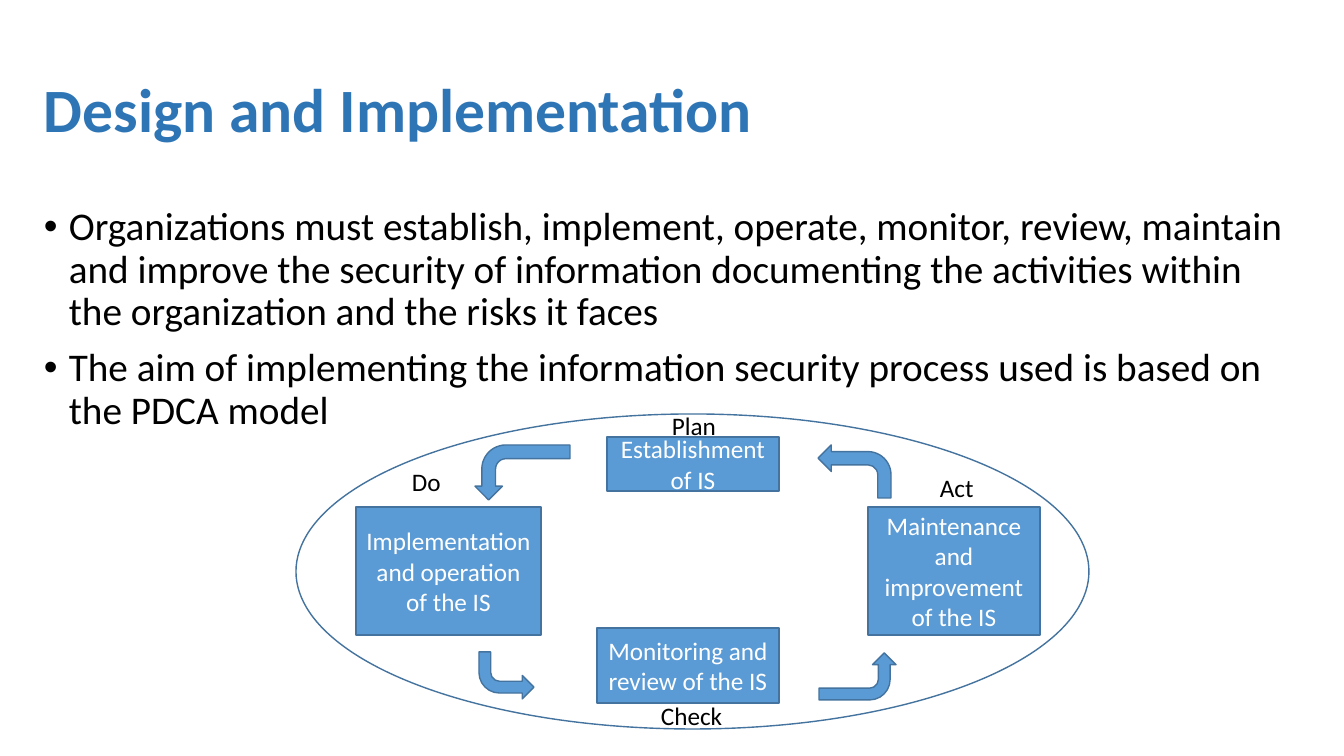
import pptx
import pptx.util
import pptx.dml.color
import pptx.enum.shapes
import pptx.enum.text
import pptx.oxml.ns
import lxml.etree

# Content: places are (left, top, width, height) in px
PAGE_SIZE = (1344, 756)
TITLE = ("Design and Implementation", (34, 40, 1278, 146))
BULLETS = [
    "Organizations must establish, implement, operate, monitor, review, maintain and improve "
    "the security of information documenting the activities within the organization and the risks it faces",
    "The aim of implementing the information security process used is based on the PDCA model",
]
BULLETS_PLACE = (34, 202, 1278, 251)
CYCLE_PLACE = (296, 414, 793, 315)
STAGES = [
    ("Establishment of IS", (607, 437, 172, 54)),
    ("Monitoring and review of the IS", (597, 628, 182, 75)),
    ("Maintenance and improvement of the IS", (868, 507, 172, 128)),
    ("Implementation and operation of the IS", (356, 507, 185, 128)),
]
# Each arrow is mirrored top to bottom, then turned by the given degrees
ARROWS = [
    ((479, 652, 55, 47), 0),
    ((834, 638, 47, 77), 270),
    ((495, 425, 55, 95), 90),
    ((818, 445, 73, 53), 180),
]
LABELS = [
    ("Plan", (662, 405, 65, 40)),
    ("Do", (402, 461, 49, 40)),
    ("Check", (651, 695, 83, 40)),
    ("Act", (930, 467, 54, 40)),
]


class Theme:
    font = "Calibri"
    title, text, light = "2E75B6", "000000", "FFFFFF"
    fill, line = "5B9BD5", "43739E"
    title_size, body_size, small_size = 44, 28, 18
    line_width = 1


EMU_PER_PX = 914400 / 100.8
SHAPES = pptx.enum.shapes.MSO_SHAPE
ALIGN = pptx.enum.text.PP_ALIGN
ANCHOR = pptx.enum.text.MSO_ANCHOR
AUTO_SIZE = pptx.enum.text.MSO_AUTO_SIZE
qn = pptx.oxml.ns.qn


def px(length):
    return pptx.util.Emu(round(length * EMU_PER_PX))


def color(value):
    return pptx.dml.color.RGBColor.from_string(value)


def apply(target, formats):
    for name, value in formats.items():
        setattr(target, name, value)


def write(para, text, size, ink, bold=False, **formats):
    apply(para, formats)
    span = para.add_run()
    span.text = text
    apply(span.font, {"name": Theme.font, "size": pptx.util.Pt(size), "bold": bold})
    span.font.color.rgb = color(ink)


def add_box(page, place, **formats):
    box = page.shapes.add_textbox(*map(px, place))
    apply(box.text_frame, {"word_wrap": True, **formats})
    return box.text_frame


def add_figure(page, kind, place, fill=None):
    figure = page.shapes.add_shape(kind, *map(px, place))
    figure.shadow.inherit = False
    if fill:
        figure.fill.solid()
        figure.fill.fore_color.rgb = color(fill)
    else:
        figure.fill.background()
    figure.line.color.rgb = color(Theme.line)
    figure.line.width = pptx.util.Pt(Theme.line_width)
    return figure


def add_bullet(para):
    properties = para._p.get_or_add_pPr()
    indent = px(25)
    properties.set("marL", str(indent))
    properties.set("indent", str(-indent))
    lxml.etree.SubElement(properties, qn("a:buFont")).set("typeface", "Arial")
    lxml.etree.SubElement(properties, qn("a:buChar")).set("char", "•")


def main():
    deck = pptx.Presentation()
    deck.slide_width, deck.slide_height = map(px, PAGE_SIZE)
    page = deck.slides.add_slide(deck.slide_layouts[6])

    # Title and bullets
    text, place = TITLE
    frame = add_box(page, place, vertical_anchor=ANCHOR.MIDDLE)
    write(frame.paragraphs[0], text, Theme.title_size, Theme.title, bold=True, line_spacing=0.9)
    frame = add_box(page, BULLETS_PLACE)
    for index, text in enumerate(BULLETS):
        para = frame.add_paragraph() if index else frame.paragraphs[0]
        add_bullet(para)
        write(para, text, Theme.body_size, Theme.text, line_spacing=0.9,
              space_before=pptx.util.Pt(10 if index else 0))

    # Cycle with its stages
    add_figure(page, SHAPES.OVAL, CYCLE_PLACE)
    for text, place in STAGES:
        frame = add_figure(page, SHAPES.RECTANGLE, place, Theme.fill).text_frame
        apply(frame, {"word_wrap": True, "vertical_anchor": ANCHOR.MIDDLE})
        write(frame.paragraphs[0], text, Theme.small_size, Theme.light, alignment=ALIGN.CENTER)

    # Arrows between stages
    for place, turn in ARROWS:
        arrow = add_figure(page, SHAPES.BENT_ARROW, place, Theme.fill)
        arrow.rotation = turn
        arrow._element.spPr.find(qn("a:xfrm")).set("flipV", "1")

    # Stage labels
    for text, place in LABELS:
        frame = add_box(page, place, word_wrap=False, auto_size=AUTO_SIZE.SHAPE_TO_FIT_TEXT)
        write(frame.paragraphs[0], text, Theme.small_size, Theme.text)

    deck.save("out.pptx")


if __name__ == "__main__":
    main()
